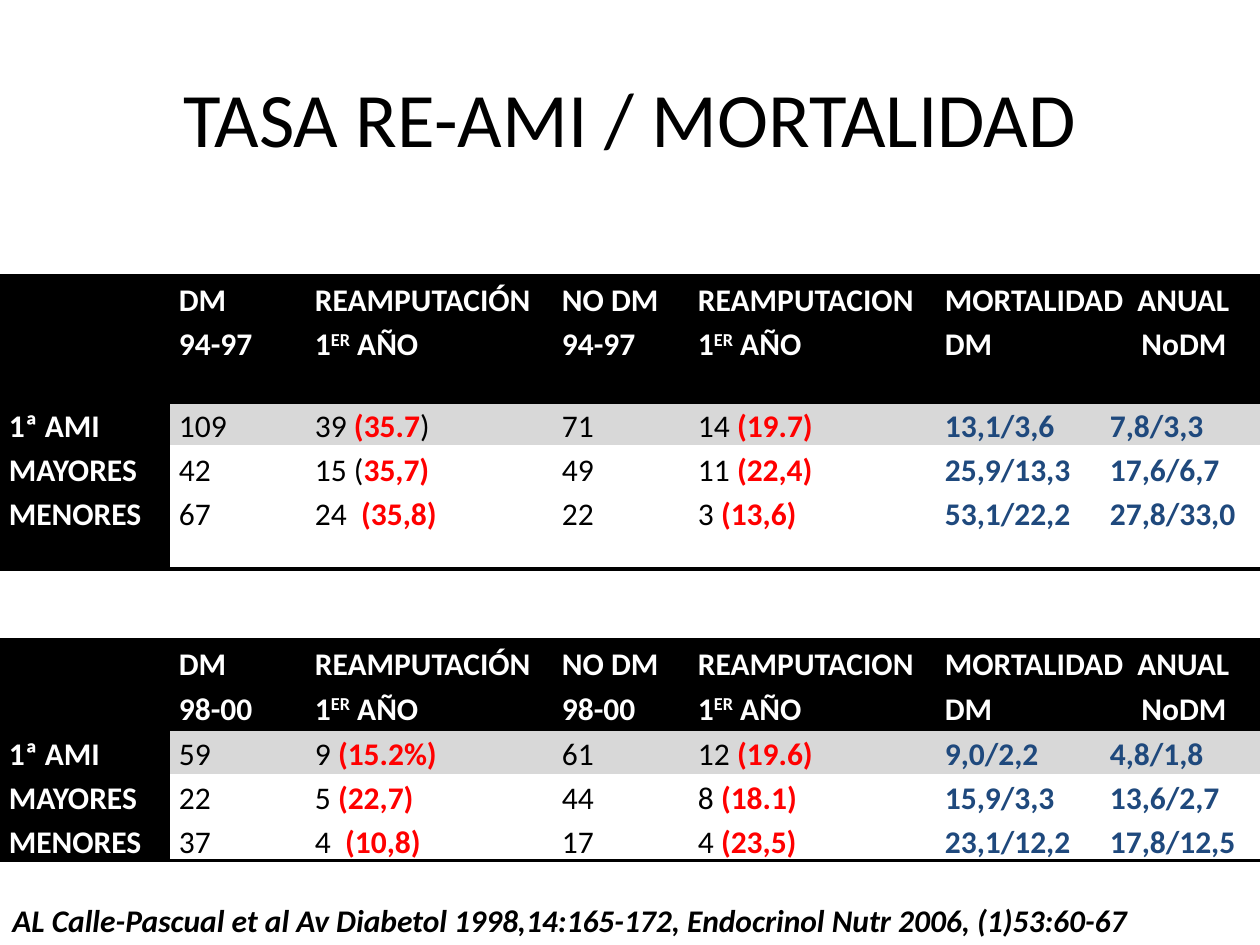
from pptx import Presentation
from pptx.util import Inches, Pt
from pptx.dml.color import RGBColor as RGB
from pptx.enum.text import PP_ALIGN as Align, MSO_ANCHOR as Anchor
from pptx.oxml import parse_xml
from pptx.oxml.ns import nsdecls

BLACK, WHITE, RED, BLUE, GRAY = "000000", "FFFFFF", "FF0000", "1F497D", "D8D8D8"


def put(para, text, size=18, color=BLACK, bold=False, italic=False, mark=None, lift=0):
    for i, part in enumerate(text.split("|")):
        if not part:
            continue
        run = para.add_run()
        run.text = part
        font = run.font
        font.name, font.size, font.italic = "Calibri", Pt(size), italic
        high = i % 2 == 1
        font.bold = bold or high
        font.color.rgb = RGB.from_string(mark if high and mark else color)
        if high and lift:
            run._r.get_or_add_rPr().set("baseline", str(lift * 1000))


def edge(cell, side):
    cell._tc.get_or_add_tcPr().append(parse_xml(
        f'<a:{side} {nsdecls("a")} w="28575"><a:solidFill>'
        f'<a:srgbClr val="{BLACK}"/></a:solidFill></a:{side}>'))


prs = Presentation()
prs.slide_width, prs.slide_height = Inches(10), Inches(7.5)
slide = prs.slides.add_slide(prs.slide_layouts[6])

title = slide.shapes.add_textbox(Inches(0.5), Inches(0.3), Inches(9), Inches(1.25)).text_frame
title.word_wrap = True
title.vertical_anchor = Anchor.MIDDLE
title.paragraphs[0].alignment = Align.CENTER
put(title.paragraphs[0], "TASA RE-AMI / MORTALIDAD", size=44)

widths = [1.35, 1.08, 1.96, 1.08, 1.96, 1.31, 1.26]
tables = [
    (2.19, [1, 0.34, 0.98], "94-97", [
        ["109", "39 |(35.7|)", "71", "14 |(19.7)", "13,1/3,6", "7,8/3,3"],
        ["42\n67", "15 (|35,7)\n24  |(35,8)", "49\n22", "11 |(22,4)\n3 |(13,6)",
         "25,9/13,3\n53,1/22,2", "17,6/6,7\n27,8/33,0"]]),
    (5.08, [0.71, 0.35, 0.69], "98-00", [
        ["59", "9 |(15.2%)", "61", "12 |(19.6)", "9,0/2,2", "4,8/1,8"],
        ["22\n37", "5 |(22,7)\n4  |(10,8)", "44\n17", "8 |(18.1)\n4 |(23,5)",
         "15,9/3,3\n23,1/12,2", "13,6/2,7\n17,8/12,5"]]),
]

for top, highs, years, data in tables:
    head = ["", f"DM\n{years}", "REAMPUTACIÓN\n1|ER| AÑO", f"NO DM {years}",
            "REAMPUTACION\n1|ER| AÑO", "MORTALIDAD  ANUAL\nDM\tNoDM", ""]
    rows = [head, ["1ª AMI"] + data[0], ["MAYORES\nMENORES"] + data[1]]
    grid = slide.shapes.add_table(3, 7, 0, Inches(top), Inches(10), Inches(sum(highs))).table
    grid.first_row = grid.horz_banding = False
    grid._tbl.tblPr[0].text = "{2D5ABB26-0587-4C30-8999-92F81FD0307C}"
    for col, wide in zip(grid.columns, widths):
        col.width = Inches(wide)
    for row, high in zip(grid.rows, highs):
        row.height = Inches(high)
    grid.cell(0, 5).merge(grid.cell(0, 6))

    for r, row in enumerate(rows):
        for c, text in enumerate(row):
            cell = grid.cell(r, c)
            cell.margin_left = cell.margin_right = Inches(0.07)
            cell.margin_top = cell.margin_bottom = 0
            if r == 0:
                edge(cell, "lnT")
            if r != 1:
                edge(cell, "lnB")
            dark = r == 0 or c == 0
            if dark or r == 1:
                cell.fill.solid()
                cell.fill.fore_color.rgb = RGB.from_string(BLACK if dark else GRAY)
            else:
                cell.fill.background()
            color = WHITE if dark else BLUE if c > 4 else BLACK
            frame = cell.text_frame
            for i, line in enumerate(text.split("\n")):
                para = frame.add_paragraph() if i else frame.paragraphs[0]
                para.line_spacing = 1.15
                if "\t" in line:
                    para._p.get_or_add_pPr().append(parse_xml(
                        f'<a:tabLst {nsdecls("a")}><a:tab pos="{Inches(1.56)}" algn="l"/></a:tabLst>'))
                put(para, line, color=color, bold=dark or c > 4,
                    mark=None if dark else RED, lift=30 if dark else 0)

cite = slide.shapes.add_textbox(0, Inches(7.1), Inches(9.14), Inches(0.4)).text_frame
cite.word_wrap = False
put(cite.paragraphs[0],
    "AL Calle-Pascual et al Av Diabetol 1998,14:165-172, Endocrinol Nutr 2006, (1)53:60-67",
    bold=True, italic=True)

prs.save("out.pptx")
